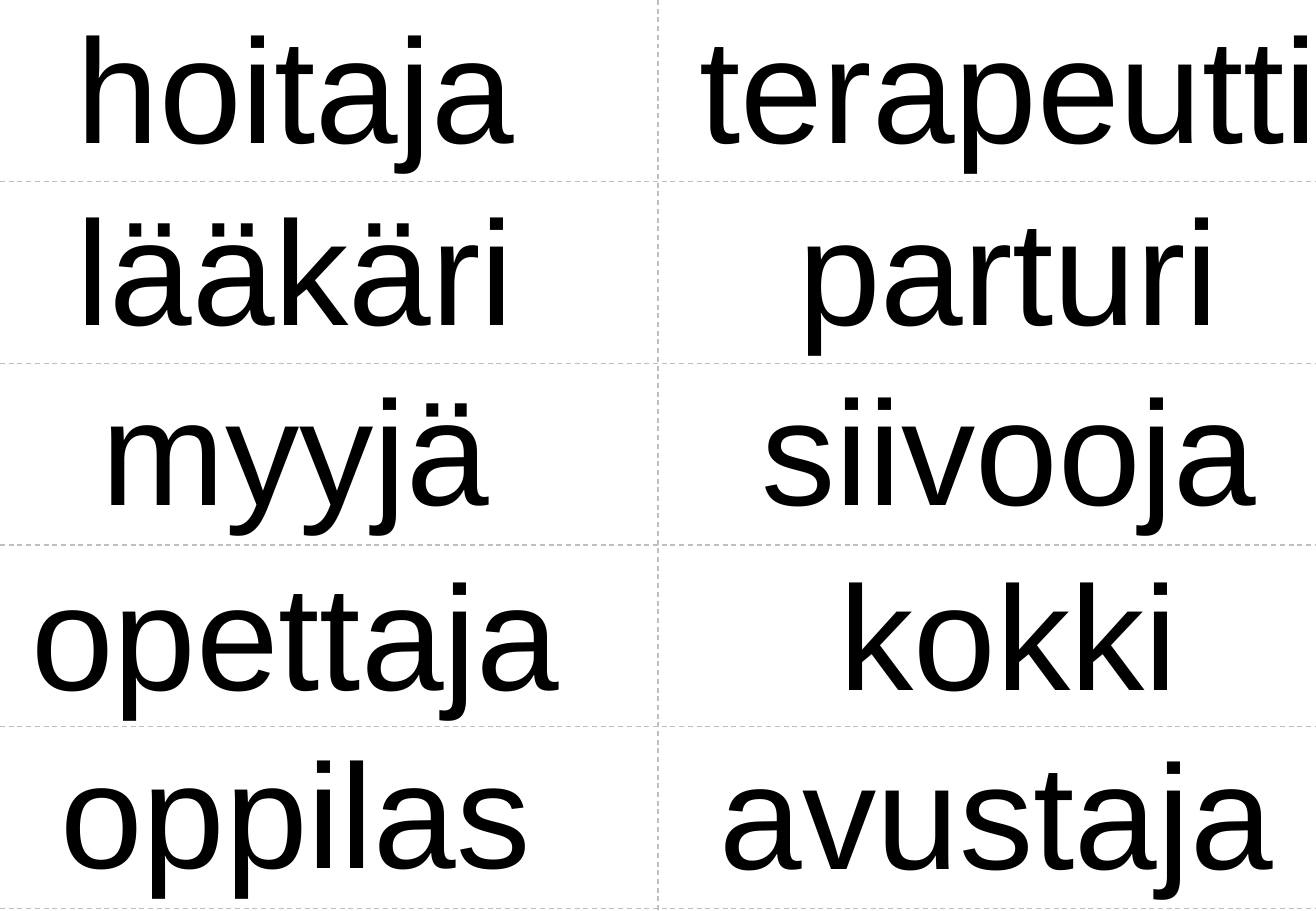
import pptx
import pptx.util
import pptx.dml.color
import pptx.enum.dml
import pptx.enum.shapes
import pptx.enum.text
import pptx.oxml.ns
import lxml.etree

Inches = pptx.util.Inches
Pt = pptx.util.Pt
RGBColor = pptx.dml.color.RGBColor

BLACK = RGBColor(0x00, 0x00, 0x00)
GREY = RGBColor(0xBF, 0xBF, 0xBF)

WIDE, HIGH = 10.83, 7.5
TALL, PAD = 1.48, 0.05
PITCH = 7.48 / 5
TOPS = [-0.09, 1.41, 2.89, 4.41, 5.88]
LEFT, RIGHT = 2.43, 8.3

JOBS = [
    (LEFT, [("hoitaja", 3.72), ("lääkäri", 3.71), ("myyjä", 3.31),
            ("opettaja", 4.46), ("oppilas", 3.99)]),
    (RIGHT, [("terapeutti", 5.21), ("parturi", 3.58), ("siivooja", 4.19),
             ("kokki", 2.9), ("avustaja", 4.67)]),
]
SHIFTS = {"avustaja": (-0.1, 0.01)}


def add_word(slide, word, mid, top, width):
    box = slide.shapes.add_textbox(
        Inches(mid - width / 2), Inches(top), Inches(width), Inches(TALL))
    frame = box.text_frame
    frame.word_wrap = False
    frame.auto_size = pptx.enum.text.MSO_AUTO_SIZE.SHAPE_TO_FIT_TEXT
    frame.margin_left = frame.margin_right = Inches(PAD)
    frame.margin_top = frame.margin_bottom = Inches(PAD)
    para = frame.paragraphs[0]
    para.alignment = pptx.enum.text.PP_ALIGN.CENTER
    run = para.add_run()
    run.text = word
    run.font.name = "Arial"
    run.font.size = Pt(88)
    run.font.color.rgb = BLACK


def add_cut(slide, *ends):
    cut = slide.shapes.add_connector(
        pptx.enum.shapes.MSO_CONNECTOR.STRAIGHT, *map(Inches, ends))
    cut.line.color.rgb = GREY
    cut.line.width = Pt(0.75)
    cut.line.dash_style = pptx.enum.dml.MSO_LINE.DASH
    lxml.etree.SubElement(
        cut._element.spPr, pptx.oxml.ns.qn("a:effectLst"))


def main():
    deck = pptx.Presentation()
    deck.slide_width = Inches(WIDE)
    deck.slide_height = Inches(HIGH)
    slide = deck.slides.add_slide(deck.slide_layouts[6])

    for mid, words in JOBS:
        for top, (word, width) in zip(TOPS, words):
            across, down = SHIFTS.get(word, (0, 0))
            add_word(slide, word, mid + across, top + down, width)

    add_cut(slide, WIDE / 2, 0, WIDE / 2, HIGH)
    for row in range(1, len(TOPS) + 1):
        add_cut(slide, 0, row * PITCH, WIDE, row * PITCH)

    deck.save("out.pptx")


if __name__ == "__main__":
    main()
